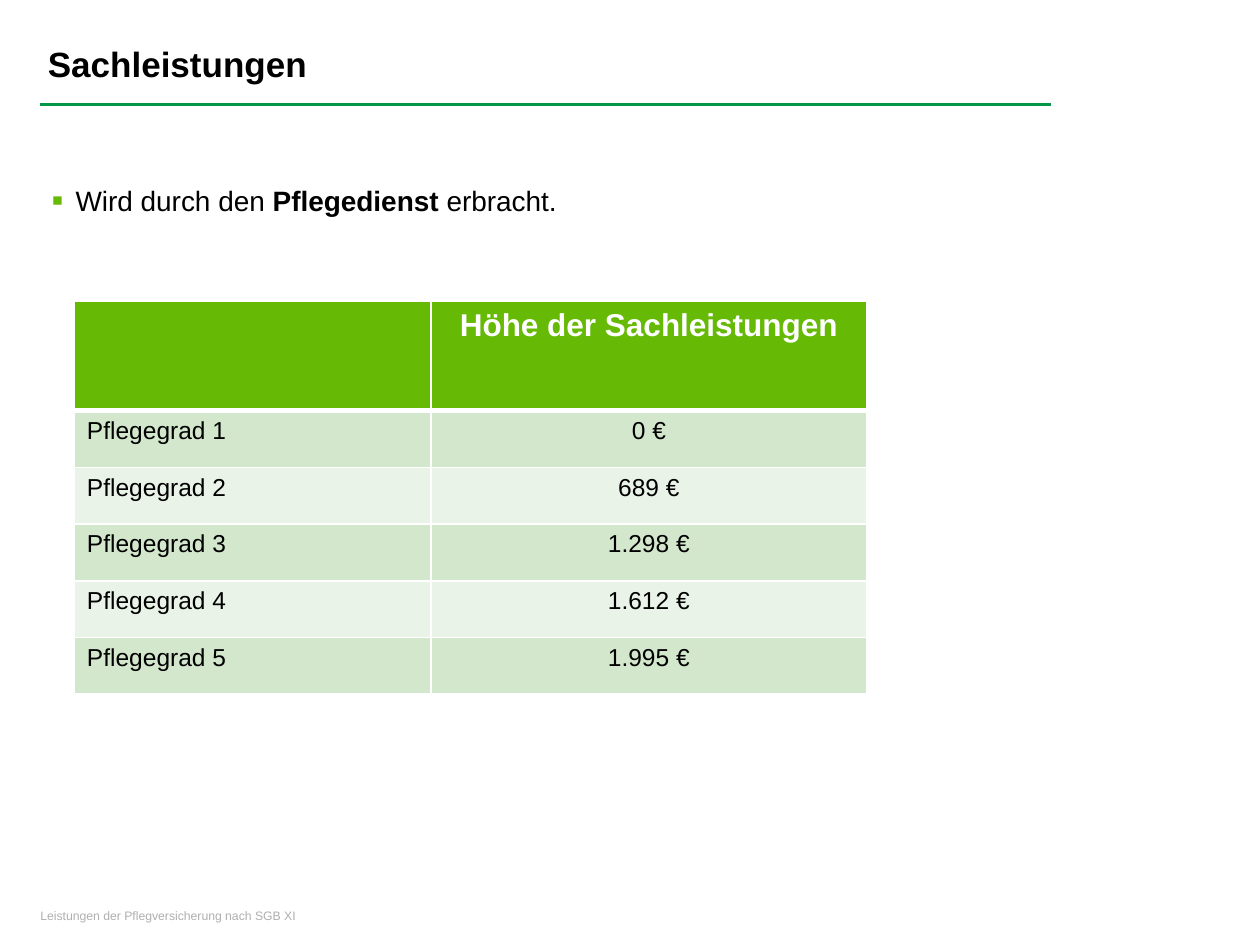
from lxml.etree import SubElement
from pptx import Presentation
from pptx.dml.color import RGBColor
from pptx.enum.shapes import MSO_CONNECTOR
from pptx.enum.text import MSO_ANCHOR, MSO_AUTO_SIZE, PP_ALIGN
from pptx.oxml.ns import qn
from pptx.util import Inches, Pt

FONT = "Arial"
COLORS = {
    "text": "000000", "white": "FFFFFF", "footer": "B0B0B0", "rule": "029646",
    "green": "66BA06", "band_dark": "D3E7CC", "band_light": "EAF3E7",
}
BENEFITS = ["0 €", "689 €", "1.298 €", "1.612 €", "1.995 €"]


def rgb(name):
    return RGBColor.from_string(COLORS[name])


def add_run(p, text, size=14, color="text", bold=False):
    r = p.add_run()
    r.text = text
    r.font.name, r.font.size, r.font.bold = FONT, Pt(size), bold
    r.font.color.rgb = rgb(color)


def place(s, left, top, width, height, anchor=MSO_ANCHOR.TOP, margins=(0.08, 0.04, 0.08, 0.04)):
    """Position a text shape and return its first paragraph."""
    s.left, s.top, s.width, s.height = map(Inches, (left, top, width, height))
    tf = s.text_frame
    tf.word_wrap, tf.auto_size, tf.vertical_anchor = True, MSO_AUTO_SIZE.NONE, anchor
    tf.margin_left, tf.margin_top, tf.margin_right, tf.margin_bottom = map(Inches, margins)
    p = tf.paragraphs[0]
    p.alignment, p.space_before = PP_ALIGN.LEFT, Pt(0)
    return p


def set_bullet(p, char, color, percent, indent):
    pPr = p._p.get_or_add_pPr()
    pPr.set("marL", str(Inches(indent)))
    pPr.set("indent", str(-Inches(indent)))
    clr = SubElement(pPr, qn("a:buClr"))
    SubElement(clr, qn("a:srgbClr"), val=COLORS[color])
    SubElement(pPr, qn("a:buSzPct"), val=str(percent * 1000))
    SubElement(pPr, qn("a:buFont"), typeface=FONT)
    SubElement(pPr, qn("a:buChar"), char=char)


def add_rule(slide, left, right, y):
    line = slide.shapes.add_connector(
        MSO_CONNECTOR.STRAIGHT, Inches(left), Inches(y), Inches(right), Inches(y))
    line.line.color.rgb = rgb("rule")
    line.line.width = Pt(1.25)
    SubElement(line._element.spPr, qn("a:effectLst"))


def set_borders(cell, **widths):
    """Draw white borders; widths in points are keyed L, R, T and B."""
    tcPr = cell._tc.get_or_add_tcPr()
    for side, width in widths.items():
        ln = SubElement(tcPr, qn(f"a:ln{side}"), w=str(Pt(width)))
        fill = SubElement(ln, qn("a:solidFill"))
        SubElement(fill, qn("a:srgbClr"), val=COLORS["white"])


def add_benefit_table(slide):
    rows = [("", "Höhe der Sachleistungen")]
    rows += [(f"Pflegegrad {i}", amount) for i, amount in enumerate(BENEFITS, 1)]
    table = slide.shapes.add_table(
        len(rows), 2, Inches(0.59), Inches(2.39), Inches(6.29), Inches(3.11)).table
    table.columns[0].width, table.columns[1].width = Inches(2.83), Inches(3.46)
    for i, row in enumerate(rows):
        header = i == 0
        table.rows[i].height = Inches(0.87 if header else 0.45)
        fill = "green" if header else "band_dark" if i % 2 else "band_light"
        for j, text in enumerate(row):
            cell = table.cell(i, j)
            set_borders(cell, L=1, R=1, T=3 if i == 1 else 1, B=3 if header else 1)
            cell.fill.solid()
            cell.fill.fore_color.rgb = rgb(fill)
            p = cell.text_frame.paragraphs[0]
            p.alignment = PP_ALIGN.CENTER if j else PP_ALIGN.LEFT
            if text:
                add_run(p, text, size=18 if header else 14,
                        color="white" if header else "text", bold=header)


def main():
    prs = Presentation()
    prs.slide_width, prs.slide_height = Inches(10), Inches(7.5)
    slide = prs.slides.add_slide(prs.slide_layouts[1])

    p = place(slide.shapes.title, 0.3, 0.27, 7.61, 0.47, anchor=MSO_ANCHOR.MIDDLE)
    add_run(p, "Sachleistungen", size=20, bold=True)
    add_rule(slide, 0.32, 8.34, 0.83)

    p = place(slide.placeholders[1], 0.33, 1.39, 8.23, 1)
    p.line_spacing = Pt(21)
    set_bullet(p, "▪", "green", 120, 0.19)
    add_run(p, "Wird durch den ", size=16)
    add_run(p, "Pflegedienst", size=16, bold=True)
    add_run(p, " erbracht.", size=16)

    add_benefit_table(slide)

    footer = slide.shapes.add_textbox(0, 0, 0, 0)
    p = place(footer, 0.32, 7.21, 5.28, 0.19, margins=(0, 0, 0.08, 0.04))
    add_run(p, "Leistungen der Pflegversicherung nach SGB XI", size=7, color="footer")

    prs.save("out.pptx")


if __name__ == "__main__":
    main()
